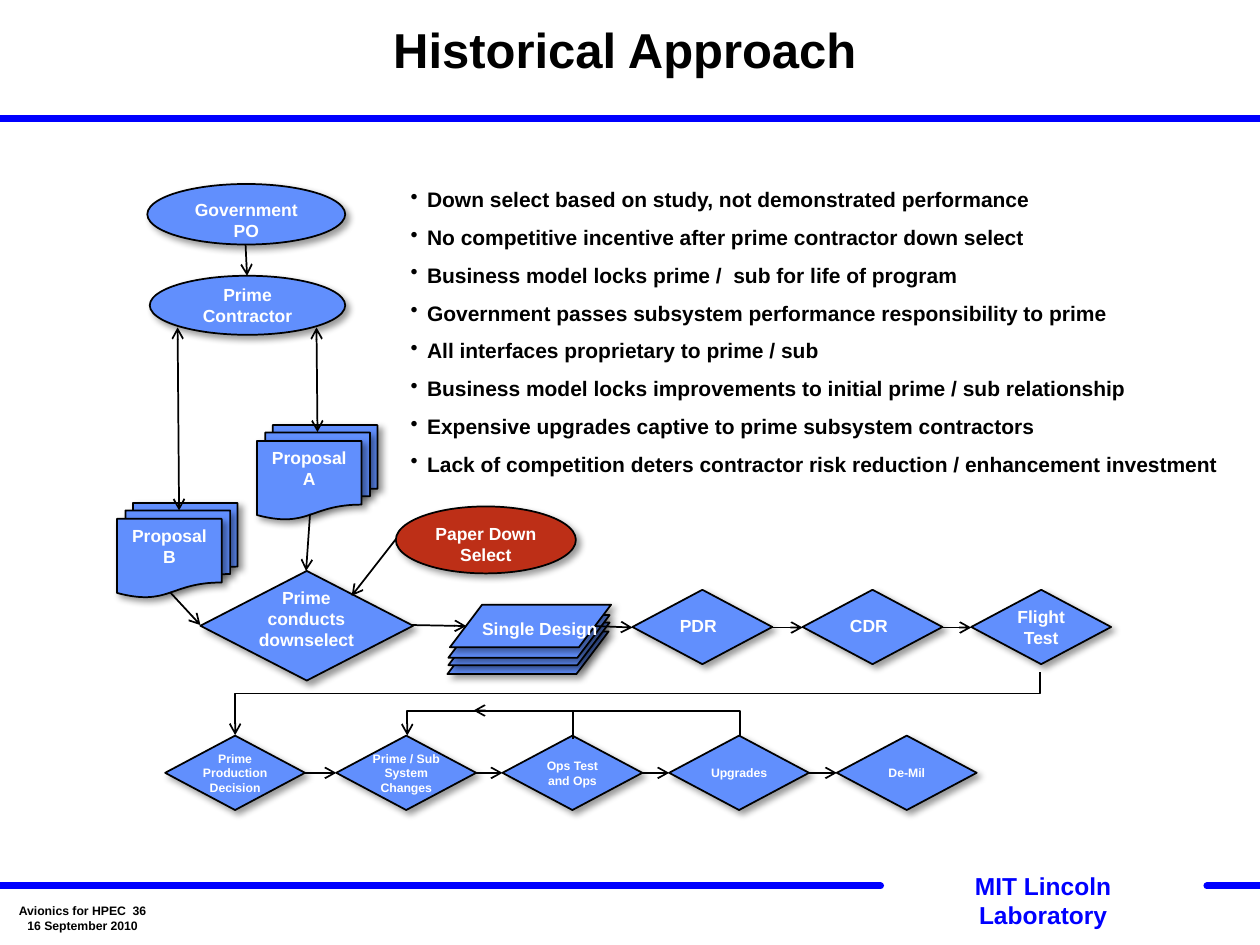
from lxml.etree import SubElement
from pptx import Presentation
from pptx.dml.color import RGBColor
from pptx.enum.shapes import MSO_CONNECTOR, MSO_SHAPE
from pptx.enum.text import MSO_ANCHOR, MSO_AUTO_SIZE, PP_ALIGN
from pptx.oxml.ns import qn
from pptx.util import Cm, Pt

BLACK = RGBColor(0x00, 0x00, 0x00)
WHITE = RGBColor(0xFF, 0xFF, 0xFF)
BLUE = RGBColor(0x00, 0x00, 0xFF)
SKY = RGBColor(0x61, 0x8F, 0xFD)
RUST = RGBColor(0xBD, 0x2F, 0x17)
OVAL, DOC = MSO_SHAPE.OVAL, MSO_SHAPE.FLOWCHART_DOCUMENT
GEM, SLANT = MSO_SHAPE.FLOWCHART_DECISION, MSO_SHAPE.FLOWCHART_DATA
STRAIGHT, ELBOW = MSO_CONNECTOR.STRAIGHT, MSO_CONNECTOR.ELBOW
TOP, MIDDLE = MSO_ANCHOR.TOP, MSO_ANCHOR.MIDDLE
LEFT, CENTER = PP_ALIGN.LEFT, PP_ALIGN.CENTER

BASE = {"word_wrap": True, "auto_size": MSO_AUTO_SIZE.NONE, "vertical_anchor": TOP,
        "margin_left": Cm(0.25), "margin_right": Cm(0.25),
        "margin_top": Cm(0.13), "margin_bottom": Cm(0.13)}
MID = {"vertical_anchor": MIDDLE}
TIGHT = {**MID, "margin_left": 0, "margin_right": 0}

deck = Presentation()
deck.slide_width, deck.slide_height = Cm(25.4), Cm(19.05)
slide = deck.slides.add_slide(deck.slide_layouts[5])
shapes = slide.shapes


def write(frame, text, size=10, color=WHITE, align=CENTER, space=None, bullet=False, look=None):
    """Fill a text frame, one paragraph for each line of text."""
    for name, value in {**BASE, **(look or {})}.items():
        setattr(frame, name, value)
    frame.text = text
    for para in frame.paragraphs:
        if bullet:
            props = para._p.get_or_add_pPr()
            props.set("marL", str(Cm(0.33)))
            props.set("indent", str(-Cm(0.33)))
            SubElement(props, qn("a:buChar"), char="•")
        para.alignment, para.line_spacing = align, space
        font = para.font
        font.name, font.size, font.bold = "Arial", Pt(size), True
        font.color.rgb = color


def node(kind, box, text="", fill=SKY, **style):
    """Add a flow chart shape with its outline and soft shadow."""
    shape = shapes.add_shape(kind, *map(Cm, box))
    shape.fill.solid()
    shape.fill.fore_color.rgb = fill
    shape.line.color.rgb = BLACK
    shape.line.width = Pt(1)
    shape.shadow.inherit = False
    effects = shape._element.spPr.find(qn("a:effectLst"))
    shadow = SubElement(effects, qn("a:outerShdw"), blurRad=str(Pt(4)),
                        dist=str(Pt(3)), dir="2700000", algn="tl", rotWithShape="0")
    tint = SubElement(shadow, qn("a:srgbClr"), val="000000")
    SubElement(tint, qn("a:alpha"), val="40000")
    if text:
        write(shape.text_frame, text, **style)


# Title
title = shapes.title
title.left, title.top, title.width, title.height = map(Cm, (2.97, 0, 19.25, 2.11))
write(title.text_frame, "Historical Approach", 28, BLACK, space=Pt(30), look=MID)

# Blue rules and footer
for start, end, level in [(0, 25.4, 2.39), (24.33, 25.4, 17.86), (0, 17.75, 17.86)]:
    rule = shapes.add_connector(STRAIGHT, Cm(start), Cm(level), Cm(end), Cm(level))
    rule.line.color.rgb = BLUE
    rule.line.width = Pt(4)
    props = rule._element.spPr
    props.find(qn("a:ln")).set("cap", "rnd")
    SubElement(props, qn("a:effectLst"))

owner = shapes.add_textbox(*map(Cm, (18.06, 17.42, 5.94, 0.84)))
write(owner.text_frame, "MIT Lincoln Laboratory", 14, BLUE,
      look={"margin_left": Cm(0.5), "margin_right": Cm(0.5)})
foot = shapes.add_textbox(*map(Cm, (0.74, 17.88, 1.85, 1.27)))
write(foot.text_frame, "Avionics for HPEC  36\n16 September 2010", 7, BLACK,
      look={**MID, "word_wrap": False})

# Lower row of steps
GEM_W, GEM_H = 2.82, 1.5
STEPS = [(3.33, "Prime Production Decision"), (6.78, "Prime / Sub System\nChanges"),
         (10.13, "Ops Test and Ops"), (13.49, "Upgrades"), (16.87, "De-Mil")]
for left, text in STEPS:
    node(GEM, (left, 14.83, GEM_W, GEM_H), text, size=7, look=TIGHT)

# Parties and proposals
node(OVAL, (2.97, 3.71, 3.99, 1.22), "Government PO")
node(OVAL, (7.98, 10.21, 3.63, 1.35), "Paper Down Select", RUST)
node(OVAL, (3.02, 5.56, 3.94, 1.19), "Prime Contractor", look=MID)
for left, top, text in [(5.18, 8.89, "Proposal A"), (2.36, 10.46, "Proposal B")]:
    for shift, label in [(0.32, ""), (0.17, ""), (0, text)]:
        node(DOC, (left + shift, top - shift, 2.11, 1.6), label)

# Upper row of steps
node(GEM, (4.04, 11.51, 4.29, 2.21))
for left, top, text in [(9.02, 12.73, ""), (9.04, 12.55, ""), (9.04, 12.4, ""),
                        (9.07, 12.19, "Single Design")]:
    node(SLANT, (left, top, 3.25, 0.86), text, align=LEFT,
         look={**TIGHT, "margin_top": Cm(0.25), "word_wrap": False})
REVIEWS = [(12.75, "PDR", LEFT, {}), (16.18, "CDR", LEFT, {}),
           (19.58, "Flight Test", CENTER, TIGHT)]
for left, text, align, look in REVIEWS:
    node(GEM, (left, 11.89, GEM_W, GEM_H), text, align=align, look=look)
choice = shapes.add_textbox(*map(Cm, (4.88, 11.71, 2.59, 1.55)))
write(choice.text_frame, "Prime conducts downselect")

# Bullets
POINTS = [
    "Down select based on study, not demonstrated performance",
    "No competitive incentive after prime contractor down select",
    "Business model locks prime /  sub for life of program",
    "Government passes subsystem performance responsibility to prime",
    "All interfaces proprietary to prime / sub",
    "Business model locks improvements to initial prime / sub relationship",
    "Expensive upgrades captive to prime subsystem contractors",
    "Lack of competition deters contractor risk reduction / enhancement investment",
]
points = shapes.add_textbox(*map(Cm, (8.03, 3.38, 16.94, 6.4)))
points.fill.solid()
points.fill.fore_color.rgb = WHITE
write(points.text_frame, "\n".join(POINTS), 12, BLACK, LEFT, 1.5, True)

# Arrows: straight ones by their ends, bent ones by frame, turn and bend
BOTH = [(3.58, 6.6, 3.61, 10.29), (6.38, 6.6, 6.4, 8.71)]
ENDS = BOTH + [(4.95, 4.93, 4.98, 5.56), (6.25, 10.36, 6.17, 11.51),
               (3.43, 11.94, 4.04, 12.6), (8.31, 12.6, 9.4, 12.62),
               (11.99, 12.62, 12.75, 12.65), (7.98, 10.87, 7.09, 12.01)]
for row, level in [(REVIEWS, 12.65), (STEPS, 15.58)]:
    for step, after in zip(row, row[1:]):
        ENDS.append((step[0] + GEM_W, level, after[0], level))
arrows = [shapes.add_connector(STRAIGHT, *map(Cm, ends)) for ends in ENDS]

BENDS = [((12.22, 6.07, 1.27, 16.23), 90, False, 33900),
         ((11.56, 11.48, 0.01, 6.71), 270, True, 5080000),
         ((10.26, 13.61, 0.58, 2.01), 270, True, None)]
for (left, top, width, height), turn, flip, bend in BENDS:
    arrow = shapes.add_connector(ELBOW, Cm(left), Cm(top), Cm(left + width), Cm(top + height))
    props = arrow._element.spPr
    frame, geom = props.find(qn("a:xfrm")), props.find(qn("a:prstGeom"))
    frame.set("rot", str(turn * 60000))
    if flip:
        frame.set("flipV", "1")
    if bend:
        SubElement(geom.find(qn("a:avLst")), qn("a:gd"), name="adj1", fmla=f"val {bend}")
    else:
        geom.set("prst", "bentConnector2")
    arrows.append(arrow)

for spot, arrow in enumerate(arrows):
    arrow.line.color.rgb = BLACK
    arrow.line.width = Pt(1)
    props = arrow._element.spPr
    line = props.find(qn("a:ln"))
    if spot < len(BOTH):
        SubElement(line, qn("a:headEnd"), type="arrow")
    SubElement(line, qn("a:tailEnd"), type="arrow")
    SubElement(props, qn("a:effectLst"))

deck.save("out.pptx")
